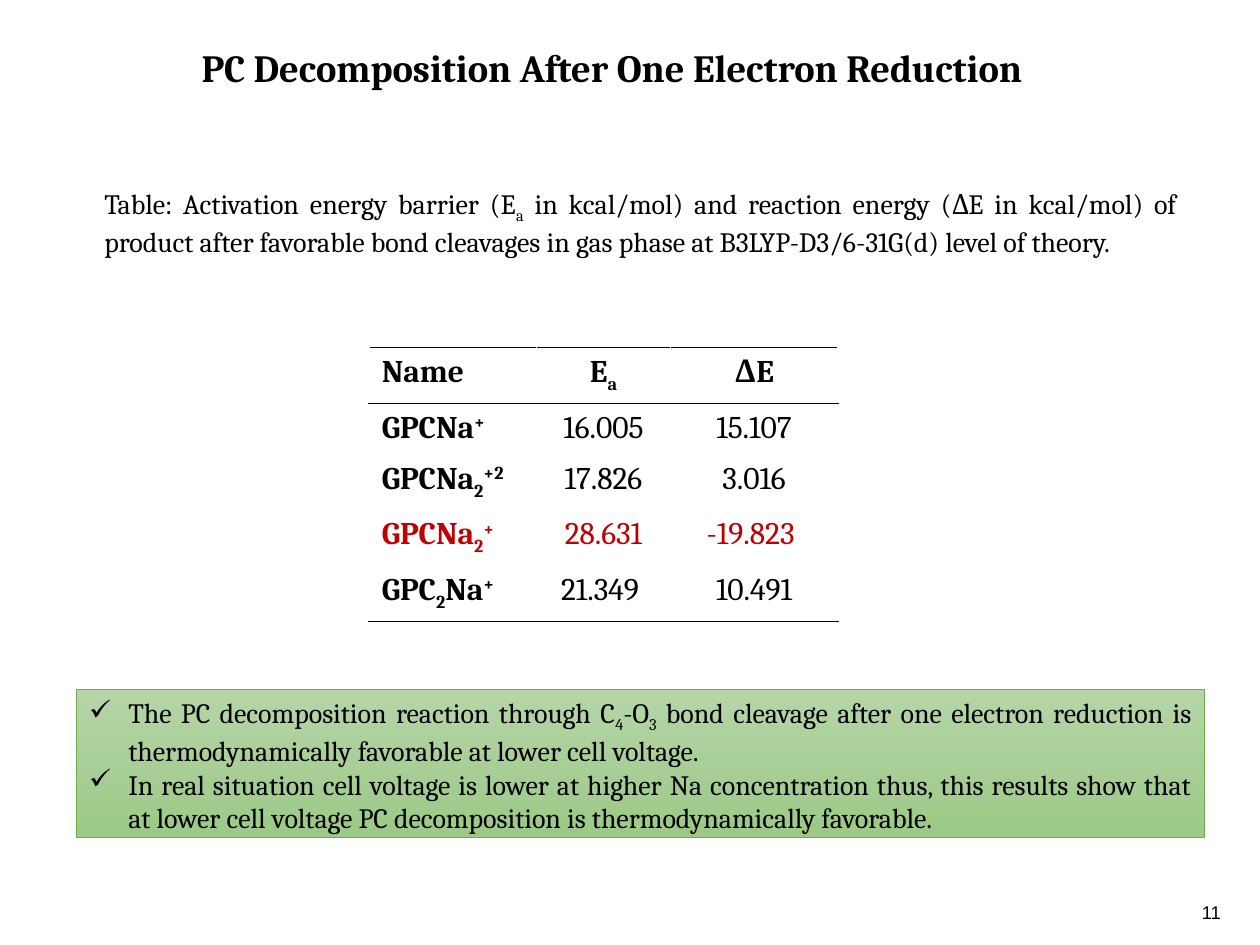
from dataclasses import dataclass

from lxml import etree
from pptx import Presentation
from pptx.dml.color import RGBColor
from pptx.enum.shapes import MSO_SHAPE
from pptx.enum.text import MSO_ANCHOR, PP_ALIGN
from pptx.oxml.ns import qn
from pptx.util import Inches, Pt

RECTANGLE = MSO_SHAPE.RECTANGLE
TOP = MSO_ANCHOR.TOP
LEFT, CENTER, JUSTIFY = PP_ALIGN.LEFT, PP_ALIGN.CENTER, PP_ALIGN.JUSTIFY
TITLE_ONLY = 5
NORMAL, SUB, SUPER = 0, -25000, 30000


@dataclass(frozen=True)
class Theme:
    """Colours, fonts and type sizes of the slide."""
    black: str = "000000"
    white: str = "FFFFFF"
    highlight: str = "C00000"
    green_line: str = "70AD47"
    green_light: str = "B5D5A7"
    green_dark: str = "9CC987"
    font: str = "Cambria"
    number_font: str = "Arial"
    title_size: float = 22
    table_size: float = 18
    body_size: float = 16
    number_size: float = 10.5


THEME = Theme()

TITLE = "PC Decomposition After One Electron Reduction"
CAPTION = [
    ("Table: Activation energy barrier (E", NORMAL), ("a", SUB),
    (" in kcal/mol) and reaction energy (ΔE in kcal/mol) of product after favorable "
     "bond cleavages in gas phase at B3LYP-D3/6-31G(d) level of theory.", NORMAL),
]
HEADER = [[("Name", NORMAL)], [("E", NORMAL), ("a", SUB)], [("ΔE", NORMAL)]]
ENERGIES = [
    ([("GPCNa", NORMAL), ("+", SUPER)], "16.005", "15.107"),
    ([("GPCNa", NORMAL), ("2", SUB), ("+2", SUPER)], "17.826", "3.016"),
    ([("GPCNa", NORMAL), ("2", SUB), ("+", SUPER)], "28.631", "-19.823 "),
    ([("GPC", NORMAL), ("2", SUB), ("Na", NORMAL), ("+", SUPER)], "21.349 ", "10.491"),
]
HIGHLIGHT_ROW = 3
CONCLUSIONS = [
    [("The PC decomposition reaction through C", NORMAL), ("4", SUB), ("-O", NORMAL),
     ("3", SUB), (" bond cleavage after one electron reduction is thermodynamically "
                  "favorable at lower cell voltage.", NORMAL)],
    [("In real situation cell voltage is lower at higher Na concentration thus, this "
      "results show that at lower cell voltage PC decomposition is thermodynamically "
      "favorable.", NORMAL)],
]


def write_paragraph(paragraph, parts, size, align=LEFT, bold=False,
                    color=THEME.black, font=THEME.font):
    """Fill a paragraph with (text, baseline) parts in one style."""
    paragraph.alignment = align
    for text, baseline in parts:
        run = paragraph.add_run()
        run.text = text
        run.font.name = font
        run.font.size = Pt(size)
        run.font.bold = bold
        run.font.color.rgb = RGBColor.from_string(color)
        if baseline != NORMAL:
            run.font._element.set("baseline", str(baseline))


def add_bullet(paragraph, character, indent):
    """Give a paragraph a hanging bullet."""
    properties = paragraph._p.get_or_add_pPr()
    properties.set("marL", str(indent))
    properties.set("indent", str(-indent))
    etree.SubElement(properties, qn("a:buChar")).set("char", character)


def set_borders(cell, top, bottom):
    """Draw white sides and the given top and bottom colours on a cell."""
    properties = cell._tc.get_or_add_tcPr()
    sides = {"lnL": THEME.white, "lnR": THEME.white, "lnT": top, "lnB": bottom}
    for position, (side, color) in enumerate(sides.items()):
        line = etree.Element(qn(f"a:{side}"), w=str(Pt(1)))
        fill = etree.SubElement(line, qn("a:solidFill"))
        etree.SubElement(fill, qn("a:srgbClr")).set("val", color)
        properties.insert(position, line)


def place_title(slide, left, top, width, height):
    """Move and format the title placeholder."""
    title = slide.shapes.title
    title.left, title.top, title.width, title.height = left, top, width, height
    title.text_frame.vertical_anchor = TOP
    write_paragraph(title.text_frame.paragraphs[0], [(TITLE, NORMAL)],
                    THEME.title_size, bold=True)


def add_text(slide, left, top, width, height, parts, size, **style):
    """Add a wrapped text box with one paragraph."""
    text_frame = slide.shapes.add_textbox(left, top, width, height).text_frame
    text_frame.word_wrap = True
    write_paragraph(text_frame.paragraphs[0], parts, size, **style)


def add_energy_table(slide, left, top, width, height):
    """Add the energy table with rules around its header and below its end."""
    rows = [HEADER] + [[name, [(barrier, NORMAL)], [(energy, NORMAL)]]
                       for name, barrier, energy in ENERGIES]
    table = slide.shapes.add_table(len(rows), len(HEADER), left, top, width, height).table
    table.first_row = table.horz_banding = False
    for column, column_width in zip(table.columns, (1.33, 1.06, 1.33)):
        column.width = Inches(column_width)
    last_row = len(rows) - 1
    for row_index, row in enumerate(rows):
        color = THEME.highlight if row_index == HIGHLIGHT_ROW else THEME.black
        top_line = THEME.black if row_index <= 1 else THEME.white
        bottom_line = THEME.black if row_index in (0, last_row) else THEME.white
        for column_index, parts in enumerate(row):
            cell = table.cell(row_index, column_index)
            cell.fill.background()
            set_borders(cell, top_line, bottom_line)
            write_paragraph(cell.text_frame.paragraphs[0], parts, THEME.table_size,
                            align=CENTER if column_index else LEFT,
                            bold=row_index == 0 or column_index == 0, color=color)


def add_conclusions(slide, left, top, width, height):
    """Add the green panel with its ticked conclusions."""
    panel = slide.shapes.add_shape(RECTANGLE, left, top, width, height)
    panel.shadow.inherit = False
    panel.fill.gradient()
    panel.fill.gradient_angle = 270
    for stop, color in zip(panel.fill.gradient_stops, (THEME.green_light, THEME.green_dark)):
        stop.color.rgb = RGBColor.from_string(color)
    panel.line.color.rgb = RGBColor.from_string(THEME.green_line)
    panel.line.width = Pt(0.5)
    text_frame = panel.text_frame
    text_frame.word_wrap = True
    text_frame.vertical_anchor = TOP
    for index, parts in enumerate(CONCLUSIONS):
        paragraph = text_frame.add_paragraph() if index else text_frame.paragraphs[0]
        write_paragraph(paragraph, parts, THEME.body_size, align=JUSTIFY)
        add_bullet(paragraph, "✓", Inches(0.31))


def main():
    """Build the slide and save it."""
    presentation = Presentation()
    presentation.slide_width, presentation.slide_height = Inches(10), Inches(7.5)
    slide = presentation.slides.add_slide(presentation.slide_layouts[TITLE_ONLY])
    place_title(slide, Inches(1.5), Inches(0.3), Inches(6.94), Inches(0.47))
    add_text(slide, Inches(0.73), Inches(1.43), Inches(8.71), Inches(0.64),
             CAPTION, THEME.body_size, align=JUSTIFY)
    add_conclusions(slide, Inches(0.61), Inches(5.47), Inches(8.95), Inches(1.18))
    add_text(slide, Inches(9.44), Inches(7.1), Inches(0.38), Inches(0.31),
             [("11", NORMAL)], THEME.number_size, font=THEME.number_font)
    add_energy_table(slide, Inches(2.93), Inches(2.76), Inches(3.72), Inches(2.03))
    presentation.save("out.pptx")


if __name__ == "__main__":
    main()
